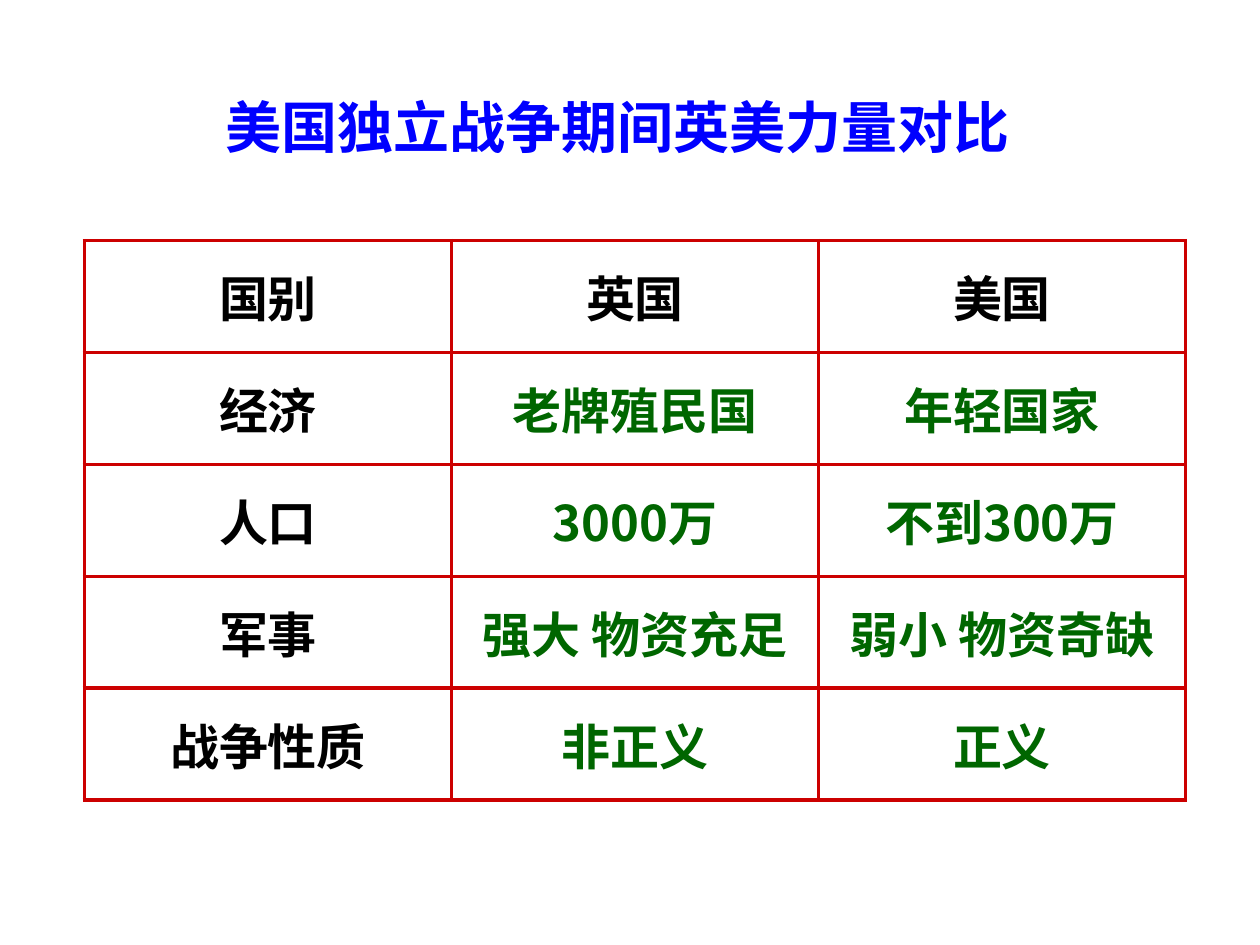
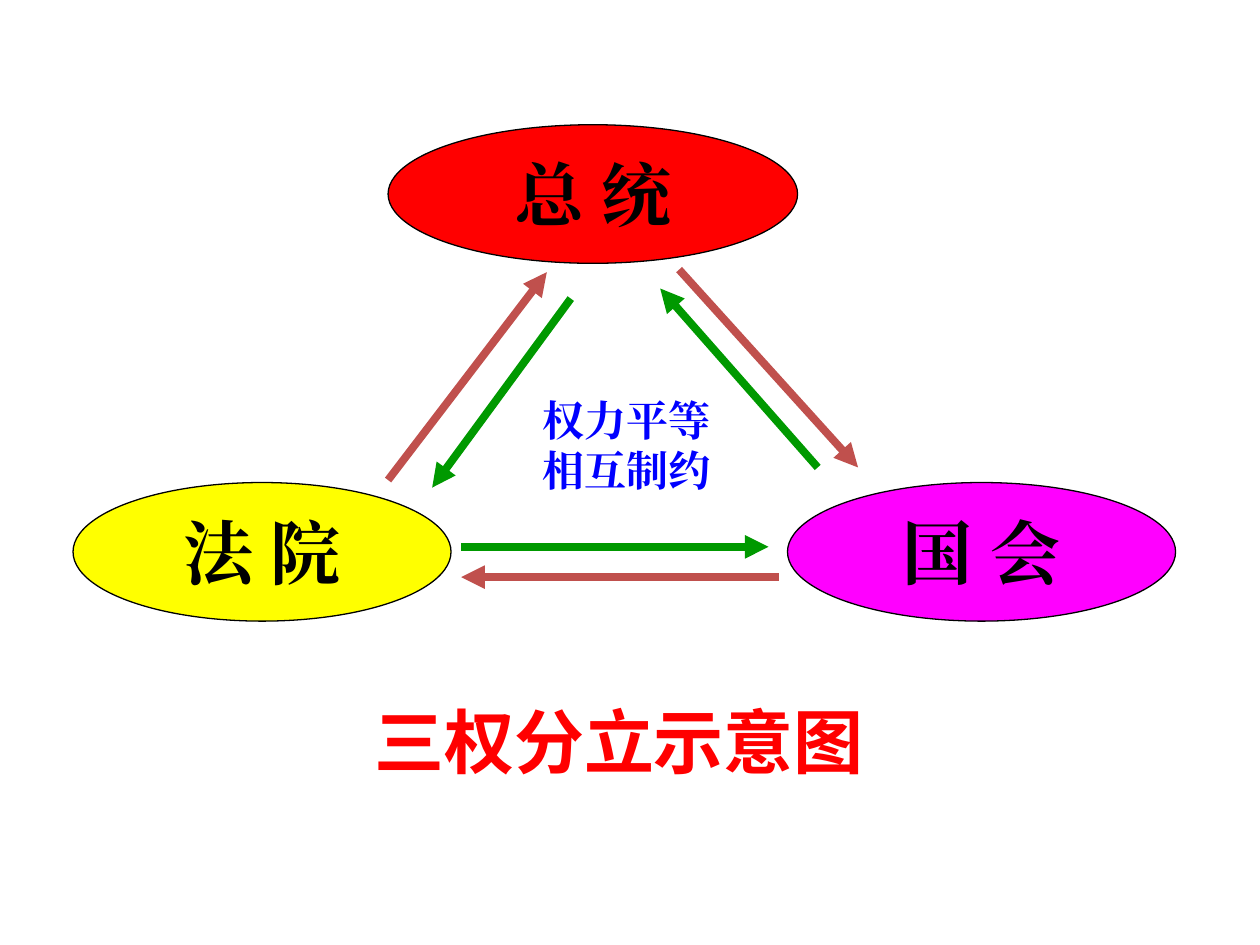
from dataclasses import dataclass

from lxml.etree import SubElement
from pptx import Presentation
from pptx.dml.color import RGBColor
from pptx.enum.shapes import MSO_CONNECTOR, MSO_SHAPE
from pptx.enum.text import MSO_ANCHOR, MSO_AUTO_SIZE, PP_ALIGN
from pptx.oxml.ns import qn
from pptx.util import Inches, Pt


@dataclass(frozen=True)
class Theme:
    black: str = "000000"
    blue: str = "0000FF"
    red: str = "FF0000"
    yellow: str = "FFFF00"
    magenta: str = "FF00FF"
    grid: str = "CC0000"
    answer: str = "006600"
    clockwise: str = "C0504D"
    counter: str = "009900"
    sans: str = "Noto Sans CJK SC"
    serif: str = "Times New Roman"
    heading: str = "Calibri"
    label_size: int = 24
    cell_size: int = 28
    title_size: int = 32
    large_size: int = 40
    grid_width: float = 2.25
    outline_width: float = 0.75
    arrow_width: float = 4.5


THEME = Theme()

COMPARISON_TITLE = "美国独立战争期间英美力量对比"
COMPARISON = [
    ("国别", "英国", "美国"),
    ("经济", "老牌殖民国", "年轻国家"),
    ("人口", "3000万", "不到300万"),
    ("军事", "强大 物资充足", "弱小 物资奇缺"),
    ("战争性质", "非正义", "正义"),
]
COMPARISON_BOX = (0.67, 1.91, 8.74, 4.44)

POWERS_TITLE = "三权分立示意图"
BALANCE = ["权力平等", "相互制约"]
BRANCH_HEIGHT = 1.1
BRANCHES = [
    ("总 统", THEME.red, 3.08, 0.99, 3.25),
    ("国 会", THEME.magenta, 6.25, 3.83, 3.08),
    ("法 院", THEME.yellow, 0.58, 3.83, 3.0),
]
CHECKS = {
    THEME.clockwise: [
        (5.39, 2.14, 6.81, 3.71),
        (6.18, 4.58, 3.66, 4.58),
        (3.08, 3.81, 4.34, 2.16),
    ],
    THEME.counter: [
        (4.53, 2.37, 3.43, 3.87),
        (3.66, 4.34, 6.1, 4.34),
        (6.49, 3.71, 5.24, 2.29),
    ],
}


def inches(*lengths):
    return [Inches(length) for length in lengths]


def rgb(color):
    return RGBColor.from_string(color)


def write(frame, lines, font, size, color, align=PP_ALIGN.CENTER):
    for index, line in enumerate(lines):
        paragraph = frame.paragraphs[0] if index == 0 else frame.add_paragraph()
        paragraph.alignment = align
        run = paragraph.add_run()
        run.text = line
        run.font.size = Pt(size)
        run.font.bold = True
        run.font.color.rgb = rgb(color)
        run.font.name = font
        SubElement(run.font._element, qn("a:ea"), typeface=font)


def add_titled_slide(deck, title, box, font, size, color):
    slide = deck.slides.add_slide(deck.slide_layouts[5])
    heading = slide.shapes.title
    heading.left, heading.top, heading.width, heading.height = inches(*box)
    frame = heading.text_frame
    frame.auto_size = MSO_AUTO_SIZE.NONE
    frame.vertical_anchor = MSO_ANCHOR.MIDDLE
    frame.word_wrap = False
    write(frame, [title], font, size, color, PP_ALIGN.LEFT)
    return slide


def add_borders(cell):
    properties = cell._tc.get_or_add_tcPr()
    for side in ("lnL", "lnR", "lnT", "lnB"):
        border = SubElement(properties, qn(f"a:{side}"), w=str(Pt(THEME.grid_width)))
        fill = SubElement(border, qn("a:solidFill"))
        SubElement(fill, qn("a:srgbClr"), val=THEME.grid)


def add_comparison(slide):
    table = slide.shapes.add_table(
        len(COMPARISON), len(COMPARISON[0]), *inches(*COMPARISON_BOX)
    ).table
    table.first_row = False
    table.horz_banding = False
    for row, entries in enumerate(COMPARISON):
        for column, entry in enumerate(entries):
            cell = table.cell(row, column)
            add_borders(cell)
            cell.fill.background()
            cell.vertical_anchor = MSO_ANCHOR.MIDDLE
            color = THEME.answer if row and column else THEME.black
            write(cell.text_frame, [entry], THEME.sans, THEME.cell_size, color)


def add_branch(slide, branch, color, left, top, width):
    oval = slide.shapes.add_shape(
        MSO_SHAPE.OVAL, *inches(left, top, width, BRANCH_HEIGHT)
    )
    oval.shadow.inherit = False
    oval.fill.solid()
    oval.fill.fore_color.rgb = rgb(color)
    oval.line.color.rgb = rgb(THEME.black)
    oval.line.width = Pt(THEME.outline_width)
    oval.text_frame.word_wrap = False
    oval.text_frame.vertical_anchor = MSO_ANCHOR.MIDDLE
    write(oval.text_frame, [branch], THEME.serif, THEME.large_size, THEME.black)


def add_check(slide, color, ends):
    arrow = slide.shapes.add_connector(MSO_CONNECTOR.STRAIGHT, *inches(*ends))
    arrow.line.color.rgb = rgb(color)
    arrow.line.width = Pt(THEME.arrow_width)
    SubElement(arrow.line._get_or_add_ln(), qn("a:tailEnd"), type="triangle")
    SubElement(arrow._element.spPr, qn("a:effectLst"))


def add_balance(slide):
    frame = slide.shapes.add_textbox(*inches(4.21, 3.08, 1.53, 0.9)).text_frame
    frame.word_wrap = False
    frame.vertical_anchor = MSO_ANCHOR.MIDDLE
    write(frame, BALANCE, THEME.serif, THEME.label_size, THEME.blue, PP_ALIGN.LEFT)


def main():
    deck = Presentation()
    deck.slide_width, deck.slide_height = inches(10, 7.5)

    comparison = add_titled_slide(
        deck, COMPARISON_TITLE, (1.69, 0.68, 6.61, 0.64),
        THEME.heading, THEME.title_size, THEME.blue,
    )
    add_comparison(comparison)

    powers = add_titled_slide(
        deck, POWERS_TITLE, (2.87, 5.49, 4.1, 0.77),
        THEME.sans, THEME.large_size, THEME.red,
    )
    for branch in BRANCHES:
        add_branch(powers, *branch)
    for color, arrows in CHECKS.items():
        for ends in arrows:
            add_check(powers, color, ends)
    add_balance(powers)

    deck.save("out.pptx")


if __name__ == "__main__":
    main()
